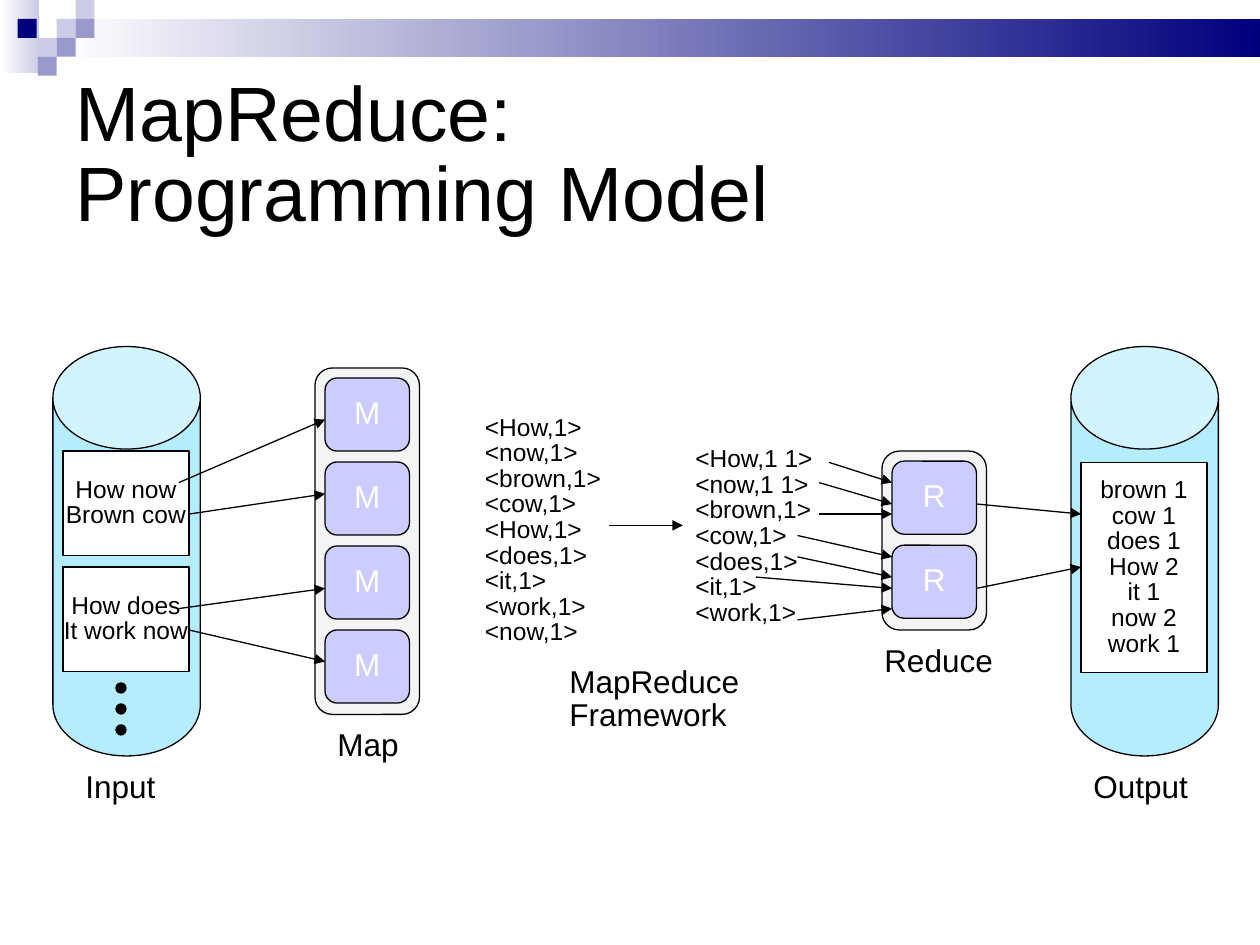
from typing import NamedTuple

from lxml.etree import SubElement
from pptx import Presentation
from pptx.dml.color import RGBColor
from pptx.enum.shapes import MSO_CONNECTOR as Connector, MSO_SHAPE as Preset
from pptx.enum.text import MSO_ANCHOR as Anchor, MSO_AUTO_SIZE as AutoSize, PP_ALIGN as Align
from pptx.oxml.ns import qn
from pptx.util import Inches, Pt

COLORS = {
    "black": "000000", "white": "FFFFFF", "navy": "00007D",
    "mist": "CCCCE6", "lilac": "9999CC", "cylinder": "B4EDFF",
    "panel": "F4F4F4", "worker": "CCCCFF",
}


class Rect(NamedTuple):
    left: float
    top: float
    width: float
    height: float


class Label(NamedTuple):
    text: str
    rect: Rect
    size: int = 18


class Arrow(NamedTuple):
    x1: float
    y1: float
    x2: float
    y2: float


def color(name: str) -> RGBColor:
    return RGBColor.from_string(COLORS[name])


def write(shape, text: str, *, size: float = 14, ink: str = "black", align=Align.LEFT,
          anchor=Anchor.TOP, wrap: bool = False, grow: bool = False, inset: float = 0.1) -> None:
    """Fill a shape with one paragraph per line; a vertical tab breaks a line."""
    frame = shape.text_frame
    frame.word_wrap = wrap
    frame.auto_size = AutoSize.SHAPE_TO_FIT_TEXT if grow else AutoSize.NONE
    frame.vertical_anchor = anchor
    frame.margin_left = frame.margin_right = Inches(inset)
    frame.margin_top = frame.margin_bottom = Inches(0.05)
    for index, line in enumerate(text.split("\n")):
        para = frame.paragraphs[0] if index == 0 else frame.add_paragraph()
        para.text = line
        para.alignment = align
        para.line_spacing = 0.87
        for span in para.runs:
            span.font.name = "Arial"
            span.font.size = Pt(size)
            span.font.color.rgb = color(ink)


def add_box(page, preset, rect: Rect, fill: str, *, outlined: bool = True,
            fade_to: str = "", corner: float | None = None):
    box = page.shapes.add_shape(preset, *map(Inches, rect))
    box.shadow.inherit = False
    if corner is not None:
        box.adjustments[0] = corner
    if fade_to:
        box.fill.gradient()
        box.fill.gradient_angle = 180
        for stop, name in zip(box.fill.gradient_stops, (fill, fade_to)):
            stop.color.rgb = color(name)
    else:
        box.fill.solid()
        box.fill.fore_color.rgb = color(fill)
    if outlined:
        box.line.color.rgb = color("black")
        box.line.width = Pt(0.75)
    else:
        box.line.fill.background()
    return box


def add_label(page, label: Label) -> None:
    box = page.shapes.add_textbox(*map(Inches, label.rect))
    write(box, label.text, size=label.size, grow=True)


def add_arrow(page, arrow: Arrow) -> None:
    line = page.shapes.add_connector(Connector.STRAIGHT, *map(Inches, arrow))
    line.line.color.rgb = color("black")
    line.line.width = Pt(0.75)
    SubElement(line.line._get_or_add_ln(), qn("a:tailEnd"), type="triangle")
    SubElement(line._element.spPr, qn("a:effectLst"))


def add_workers(page, letter: str, count: int, panel: Rect) -> None:
    """A rounded panel holding a column of equal workers."""
    add_box(page, Preset.ROUNDED_RECTANGLE, panel, "panel", corner=0.167)
    for index in range(count):
        rect = Rect(panel.left + 0.08, panel.top + 0.08 + index * 2 / 3, 0.67, 0.58)
        worker = add_box(page, Preset.ROUNDED_RECTANGLE, rect, "worker", corner=0.167)
        write(worker, letter, size=18, ink="white", align=Align.CENTER, anchor=Anchor.MIDDLE)


TILE = 0.15
TILES = [  # left, top, colour
    (0.45, 0.15, "mist"), (0.6, 0, "mist"), (0.6, 0.15, "lilac"), (0.3, 0.3, "mist"),
    (0.14, 0.15, "navy"), (0.45, 0.3, "lilac"), (0.3, 0.45, "lilac"),
]

CYLINDER_LEFTS = (0.42, 8.5)

RECORDS = [  # text, place, wrapped
    ("How now\nBrown cow", Rect(0.5, 3.58, 1, 0.83), True),
    ("How does\nIt work now", Rect(0.5, 4.5, 1, 0.83), False),
    ("brown 1\ncow 1\ndoes 1\nHow 2\nit 1\nnow 2\nwork 1", Rect(8.58, 3.67, 1, 1.67), True),
]

LABELS = [
    Label("<How,1>\n<now,1>\n<brown,1>\n<cow,1>\n<How,1>\n<does,1>\n<it,1>\n<work,1>\n<now,1>",
          Rect(3.75, 3.25, 1.12, 1.93), 14),
    Label("<How,1 1>\n<now,1 1>\n<brown,1>\n<cow,1>\n<does,1>\n<it,1>\n<work,1>",
          Rect(5.42, 3.5, 1.14, 1.52), 14),
    Label("Input", Rect(0.58, 6.08, 0.76, 0.36)),
    Label("Output", Rect(8.58, 6.08, 0.95, 0.36)),
    Label("Map", Rect(2.58, 5.75, 0.69, 0.36)),
    Label("Reduce", Rect(6.92, 5.08, 1.06, 0.36)),
    Label("MapReduce\nFramework", Rect(4.42, 5.25, 1.55, 0.62)),
]

ARROWS = [
    # Input to map
    Arrow(1.42, 3.83, 2.58, 3.33), Arrow(1.5, 4.08, 2.58, 3.92),
    Arrow(1.42, 4.83, 2.58, 4.67), Arrow(1.5, 5, 2.58, 5.25),
    # Grouping by the framework
    Arrow(4.83, 4.17, 5.42, 4.17),
    # Grouped pairs to reduce
    Arrow(6.58, 3.67, 7.08, 3.83), Arrow(6.5, 3.83, 7.08, 4), Arrow(6.5, 4.08, 7.08, 4.08),
    Arrow(6.33, 4.25, 7.08, 4.42), Arrow(6.33, 4.42, 7.08, 4.58),
    Arrow(6, 4.58, 7.08, 4.67), Arrow(6.33, 4.92, 7.08, 4.83),
    # Reduce to output
    Arrow(7.75, 4, 8.58, 4.08), Arrow(7.75, 4.67, 8.58, 4.5),
]


def main() -> None:
    deck = Presentation()
    deck.slide_width, deck.slide_height = Inches(10), Inches(7.5)
    page = deck.slides.add_slide(deck.slide_layouts[6])

    # Header band and tiles
    add_box(page, Preset.RECTANGLE, Rect(0, 0, 0.31, 0.58), "mist", fade_to="white", outlined=False)
    add_box(page, Preset.RECTANGLE, Rect(0.45, 0.15, 9.55, 0.3), "navy", fade_to="white",
            outlined=False)
    for left, top, fill in TILES:
        add_box(page, Preset.RECTANGLE, Rect(left, top, TILE, TILE), fill, outlined=False)

    # Title
    title = page.shapes.add_textbox(*map(Inches, Rect(0.5, 0.5, 9, 1.5)))
    write(title, "MapReduce:\vProgramming Model", size=44, anchor=Anchor.MIDDLE, wrap=True)

    # Storage cylinders and their records
    for left in CYLINDER_LEFTS:
        add_box(page, Preset.CAN, Rect(left, 2.75, 1.17, 3.25), "cylinder", corner=0.696)
    for text, rect, wrap in RECORDS:
        record = add_box(page, Preset.RECTANGLE, rect, "white")
        write(record, text, align=Align.CENTER, anchor=Anchor.MIDDLE, wrap=wrap,
              inset=0 if wrap else 0.1)
    for index in range(3):
        add_box(page, Preset.OVAL, Rect(0.92, 5.42 + index / 6, 0.08, 0.08), "black")

    # Map and reduce workers
    add_workers(page, "M", 4, Rect(2.5, 2.92, 0.83, 2.75))
    add_workers(page, "R", 2, Rect(7, 3.58, 0.83, 1.42))

    # Data flow and captions
    for arrow in ARROWS:
        add_arrow(page, arrow)
    for label in LABELS:
        add_label(page, label)

    deck.save("out.pptx")


if __name__ == "__main__":
    main()
